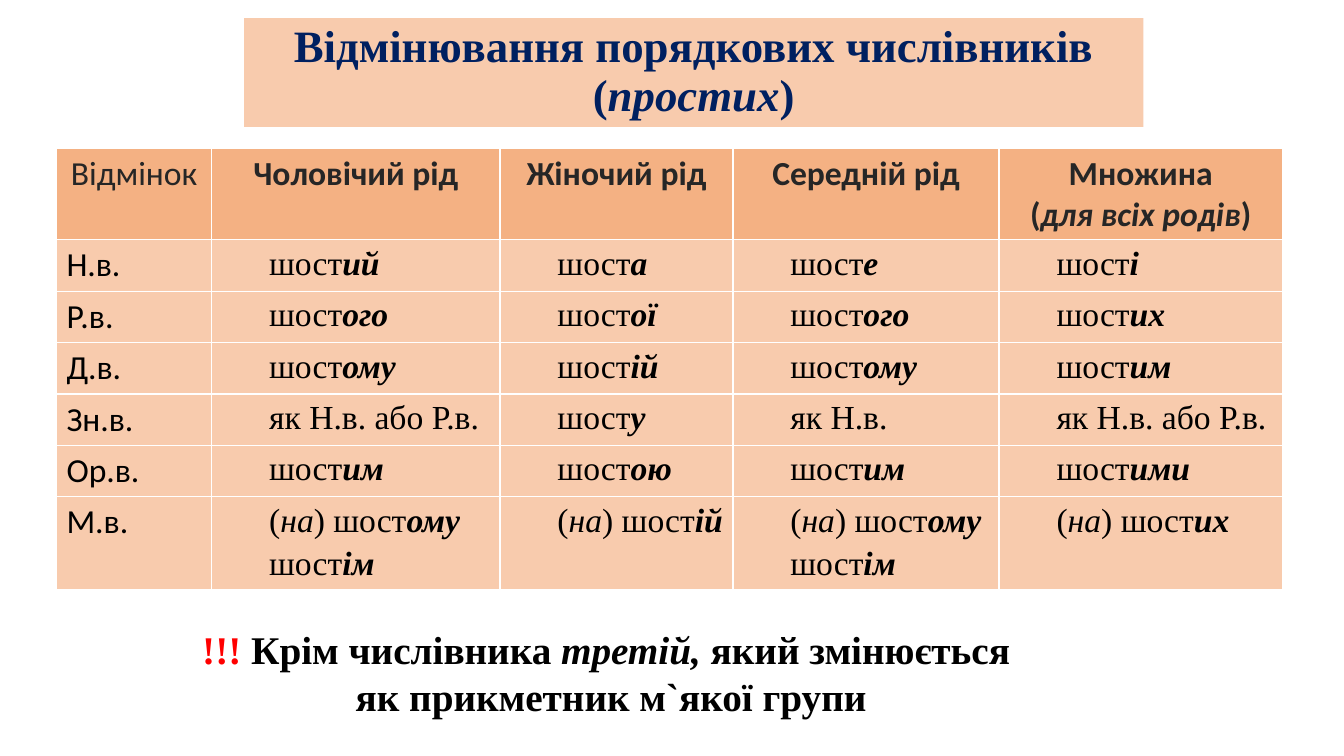
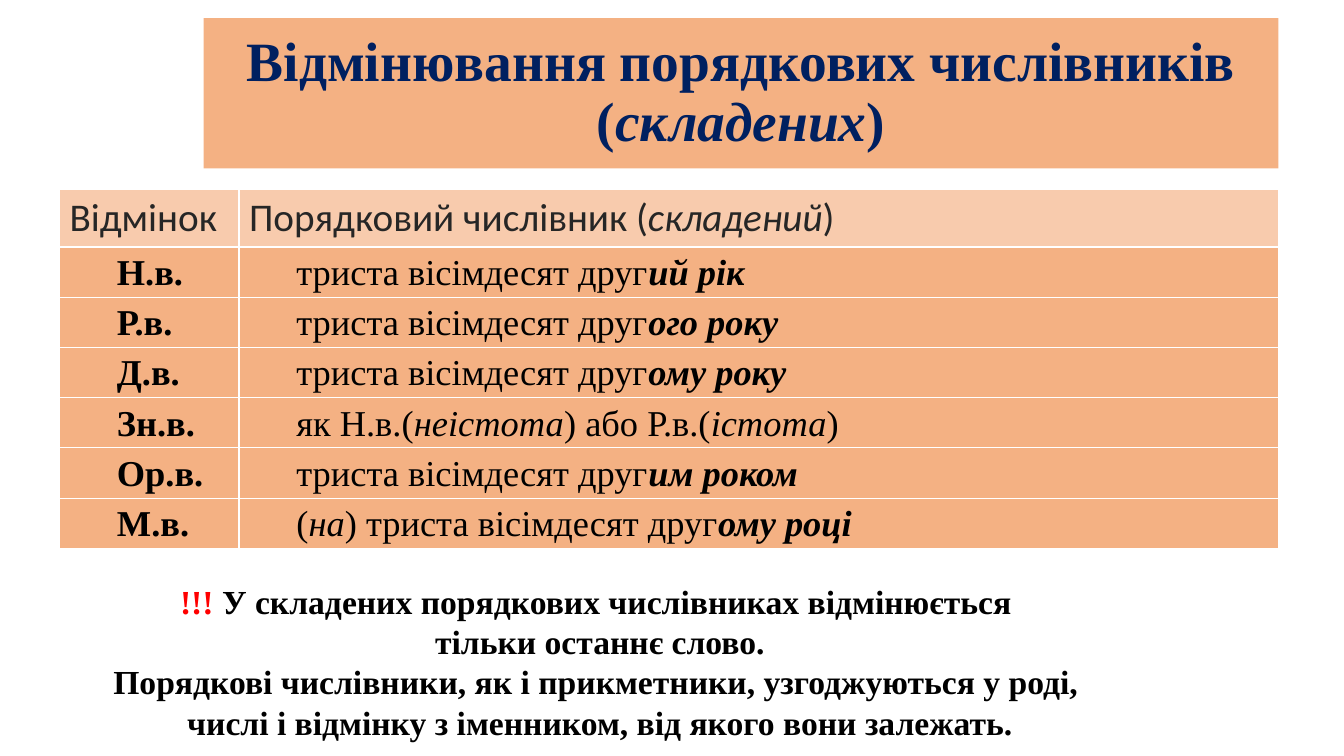
from pptx import Presentation
from pptx import util as u
from pptx.dml.color import RGBColor
from pptx.enum import text

PEACH = RGBColor(0xF8, 0xCB, 0xAD)
CORAL = RGBColor(0xF4, 0xB1, 0x83)
NAVY = RGBColor(0x00, 0x20, 0x60)
GREY = RGBColor(0x26, 0x26, 0x26)
BLACK = RGBColor(0, 0, 0)
RED = RGBColor(0xFF, 0, 0)
SERIF = "Times New Roman"
SANS = "Calibri"
LEFT, MID, JUST = text.PP_ALIGN.LEFT, text.PP_ALIGN.CENTER, text.PP_ALIGN.JUSTIFY

MARKS = {
    "*": {"bold": True, "italic": True},
    "_": {"italic": True},
    "!": {"color": RED},
}
TITLE = {"name": SERIF, "color": NAVY, "bold": True}
NOTE = {"name": SERIF, "color": BLACK, "bold": True}
HEAD = {"name": SANS, "color": GREY, "bold": False}
CASE = {"name": SANS, "color": BLACK, "bold": False}
BODY = {"name": SERIF, "color": BLACK, "bold": False}
WIDE = {"margin_left": 0.1, "margin_right": 0.1, "margin_top": 0.05, "margin_bottom": 0.05}
TIGHT = {"margin_left": 0.07, "margin_right": 0.07, "margin_top": 0, "margin_bottom": 0}


def write(frame, words, style, size, align, space=None, indent=0):
    for i, line in enumerate(words.split("\n")):
        para = frame.add_paragraph() if i else frame.paragraphs[0]
        para.alignment = align
        if space:
            para.line_spacing = space
        if indent:
            para._p.get_or_add_pPr().set("marL", str(u.Inches(indent)))
        for part in line.split("|"):
            mark = MARKS.get(part[0], {})
            run = para.add_run()
            run.text = part[1:] if part[0] in "*_" else part
            run.font.size = u.Pt(size)
            for key, val in {"italic": False, **style, **mark}.items():
                if key == "color":
                    run.font.color.rgb = val
                else:
                    setattr(run.font, key, val)


def box(slide, place, words, style, size, space=None, fill=None):
    shape = slide.shapes.add_textbox(*map(u.Inches, place))
    frame = shape.text_frame
    frame.word_wrap = True
    if fill:
        shape.fill.solid()
        shape.fill.fore_color.rgb = fill
        frame.vertical_anchor = text.MSO_ANCHOR.MIDDLE
    write(frame, words, style, size, MID, space)


PAGES = [
    {
        "title": "Відмінювання порядкових числівників (|_простих|)",
        "spot": (2.42, 0.18, 8.92, 1.08), "size": 32, "fill": PEACH,
        "at": (0.56, 1.47), "cols": [1.54, 2.86, 2.31, 2.64, 2.81],
        "rows": [0.91] + [0.51] * 5 + [0.83],
        "top": CORAL, "base": PEACH, "head": 24, "body": 24,
        "align": MID, "bold": True, "case": (CASE, WIDE, None, 0),
        "cells": [
            ["Відмінок", "Чоловічий рід", "Жіночий рід", "Середній рід",
             "Множина\n(|_для всіх родів|)"],
            ["Н.в.", "шост|*ий", "шост|*а", "шост|*е", "шост|*і"],
            ["Р.в.", "шост|*ого", "шост|*ої", "шост|*ого", "шост|*их"],
            ["Д.в.", "шост|*ому", "шост|*ій", "шост|*ому", "шост|*им"],
            ["Зн.в.", "як Н.в. або Р.в.", "шост|*у", "як Н.в.", "як Н.в. або Р.в."],
            ["Ор.в.", "шост|*им", "шост|*ою", "шост|*им", "шост|*ими"],
            ["М.в.", "(|_на|) шост|*ому\nшост|*ім", "(|_на|) шост|*ій",
             "(|_на|) шост|*ому\nшост|*ім", "(|_на|) шост|*их"],
        ],
        "note": "!!! |Крім числівника |_третій, |який змінюється \n"
                "як прикметник м`якої групи",
        "foot": (0.79, 6.15, 10.54, 1.04), "small": 28,
    },
    {
        "title": "Відмінювання порядкових числівників (|_складених|)",
        "spot": (2.02, 0.18, 10.66, 1.49), "size": 39.6, "fill": CORAL,
        "at": (0.59, 1.88), "cols": [1.78, 10.31],
        "rows": [0.57] + [0.46] * 6,
        "top": PEACH, "base": CORAL, "head": 28, "body": 26,
        "align": LEFT, "bold": False, "case": (NOTE, TIGHT, 1.15, 0.5),
        "cells": [
            ["Відмінок", "Порядковий числівник (|_складений|)"],
            ["Н.в.", "триста вісімдесят друг|*ий рік"],
            ["Р.в.", "триста вісімдесят друг|*ого року"],
            ["Д.в.", "триста вісімдесят друг|*ому року"],
            ["Зн.в.", "як Н.в.(|_неістота|) або Р.в.(|_істота|)"],
            ["Ор.в.", "триста вісімдесят друг|*им роком"],
            ["М.в.", "(|_на|) триста вісімдесят друг|*ому році"],
        ],
        "note": "!!! |У складених порядкових числівниках відмінюється \n"
                "тільки останнє слово.\n"
                "Порядкові числівники, як і прикметники, узгоджуються у роді, \n"
                "числі і відмінку з іменником, від якого вони залежать.",
        "foot": (0.41, 5.71, 11.08, 1.63), "small": 24,
    },
]

deck = Presentation()
deck.slide_width = u.Inches(13.33)
deck.slide_height = u.Inches(7.5)

for page in PAGES:
    slide = deck.slides.add_slide(deck.slide_layouts[6])
    box(slide, page["spot"], page["title"], TITLE, page["size"], 0.9, page["fill"])

    cols, rows = page["cols"], page["rows"]
    place = (*page["at"], sum(cols), sum(rows))
    grid = slide.shapes.add_table(len(rows), len(cols), *map(u.Inches, place)).table
    for col, width in zip(grid.columns, cols):
        col.width = u.Inches(width)
    for row, height in zip(grid.rows, rows):
        row.height = u.Inches(height)

    for r, line in enumerate(page["cells"]):
        for c, words in enumerate(line):
            cell = grid.cell(r, c)
            cell.fill.solid()
            cell.fill.fore_color.rgb = page["base"] if r else page["top"]
            size, align = page["body"], JUST
            if r == 0:
                style = {**HEAD, "bold": page["bold"] and c > 0}
                pad, space, indent = WIDE, None, 0
                size, align = page["head"], page["align"]
            elif c == 0:
                style, pad, space, indent = page["case"]
                align = LEFT
            else:
                style, pad, space, indent = BODY, TIGHT, 1.15, 0.5
            for side, gap in pad.items():
                setattr(cell, side, u.Inches(gap))
            write(cell.text_frame, words, style, size, align, space, indent)

    box(slide, page["foot"], page["note"], NOTE, page["small"])

deck.save("out.pptx")
